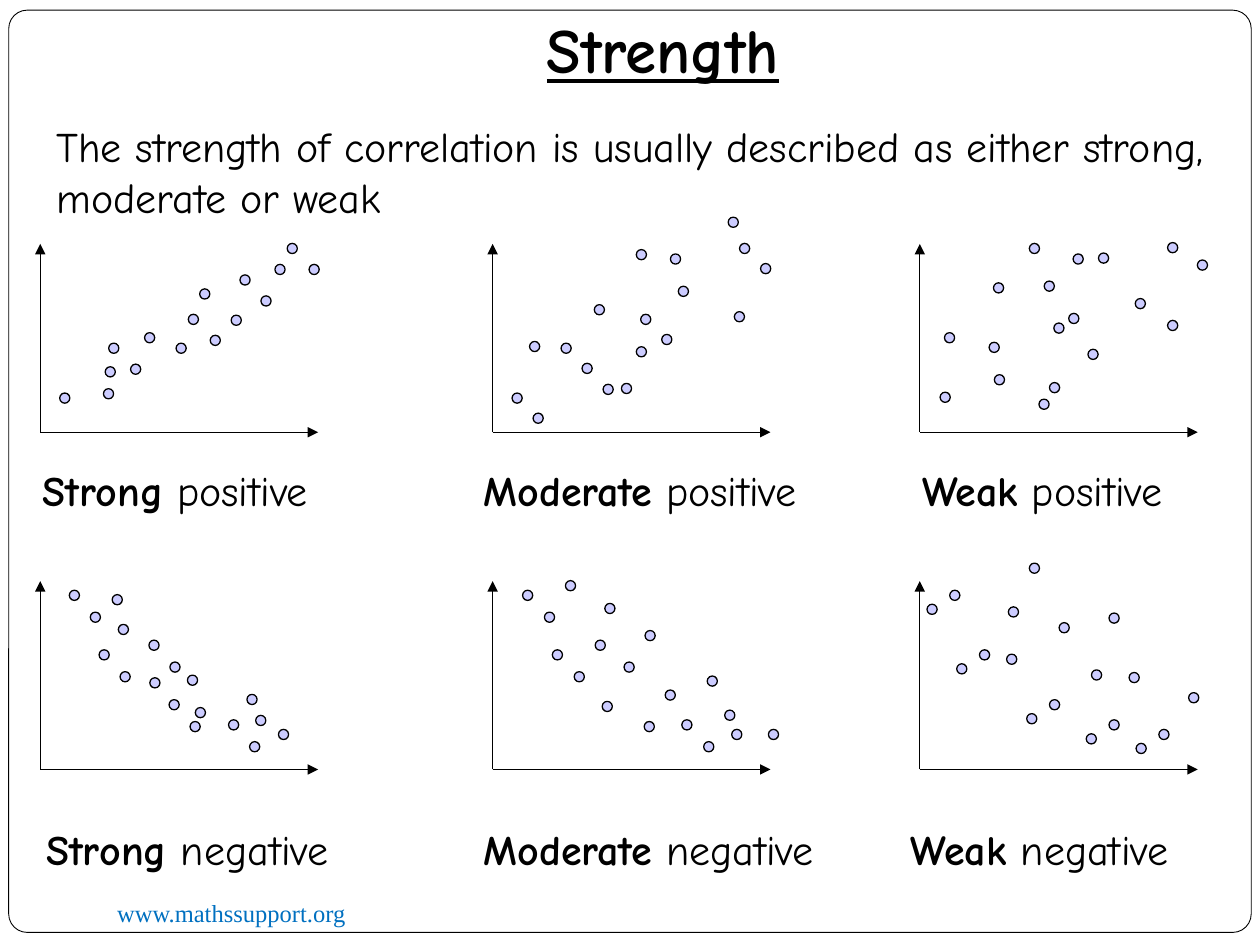
from dataclasses import dataclass

import pptx
import pptx.dml.color
import pptx.enum.shapes
import pptx.enum.text
import pptx.oxml
import pptx.oxml.ns
import pptx.util

BLACK = pptx.dml.color.RGBColor(0x00, 0x00, 0x00)
WHITE = pptx.dml.color.RGBColor(0xFF, 0xFF, 0xFF)
LAVENDER = pptx.dml.color.RGBColor(0xCC, 0xCC, 0xFF)
LINK_BLUE = pptx.dml.color.RGBColor(0x00, 0x70, 0xC0)
BODY_FONT = "Comic Neue"
BODY_SIZE = 24
AXIS_WIDTH = 158.8
AXIS_HEIGHT = 107.6
DOT_SIZE = 5.8


@dataclass(frozen=True)
class Box:
    left: float
    top: float
    width: float
    height: float


@dataclass(frozen=True)
class Column:
    strength: str
    axis_x: float
    label_width: float


@dataclass(frozen=True)
class Row:
    direction: str
    axis_y: float
    label_top: float
    trend: dict[str, tuple[float, float]]


@dataclass(frozen=True)
class Cluster:
    right: float
    up: float
    members: str


@dataclass(frozen=True)
class ScatterPlot:
    column: Column
    row: Row
    label_left: float
    clusters: list[Cluster]
    strays: list[tuple[float, float]]


RISING = dict(zip("abcdef", [(0, 0), (28, 28.5), (62.5, 5.5), (73.5, 45), (90.5, 79.5), (130, 85.5)]))
FALLING = dict(zip("abcdef", [(0, 0), (17, -34), (45.5, -28.5), (57, -62.5), (91, -74), (119.5, -79.5)]))
STRONG = Column("Strong", 23, 196)
MODERATE = Column("Moderate", 281.5, 228)
WEAK = Column("Weak", 525.6, 187)
POSITIVE = Row("positive", 247, 262, RISING)
NEGATIVE = Row("negative", 439.7, 467, FALLING)

PLOTS = [
    ScatterPlot(
        STRONG, POSITIVE, 17.3,
        [Cluster(14, 19.5, "abdf"), Cluster(26.5, 7.5, "bdf")],
        [(80.5, 48), (39, 22), (112, 64), (117, 87), (62.5, 54), (94, 79), (137, 93),
         (129, 75), (40, 34.5)],
    ),
    ScatterPlot(
        MODERATE, POSITIVE, 269.3,
        [Cluster(14, 19.5, "abcdef"), Cluster(26, 8, "abdf")],
        [(85, 46), (109, 80.5), (66, 24.5), (24, 49), (61, 70), (85, 101.5), (141, 66),
         (137.5, 120)],
    ),
    ScatterPlot(
        WEAK, POSITIVE, 519.8,
        [Cluster(14.5, 20, "abcdef"), Cluster(17, 54, "abcd"), Cluster(71, 16, "abde")],
        [(74, 83.5), (45.5, 30), (126, 73.5), (65.5, 105)],
    ),
    ScatterPlot(
        STRONG, NEGATIVE, 19.4,
        [Cluster(19.5, 99.5, "abcdef"), Cluster(31.5, 87, "abcde")],
        [(44, 97), (47.5, 80), (65.5, 49.5), (87, 51), (121, 40), (91.5, 32.5), (126, 28)],
    ),
    ScatterPlot(
        MODERATE, NEGATIVE, 269.3,
        [Cluster(20, 99.5, "abef"), Cluster(44.5, 105, "abcde"), Cluster(32.5, 87, "abcde")],
        [(67, 92), (65.5, 36), (125.5, 50.5), (160.5, 20)],
    ),
    ScatterPlot(
        WEAK, NEGATIVE, 513.4,
        [Cluster(20, 99.5, "abdef"), Cluster(65.5, 115, "abcde"), Cluster(7, 91.5, "abcdef")],
        [(53.5, 90), (101, 54)],
    ),
]


def in_points(*lengths: float) -> list[pptx.util.Pt]:
    return [pptx.util.Pt(length) for length in lengths]


def bounds(box: Box) -> list[pptx.util.Pt]:
    return in_points(box.left, box.top, box.width, box.height)


def format_font(font, size: float, color=BLACK, name: str = BODY_FONT, bold: bool = False) -> None:
    font.name = name
    font.size = pptx.util.Pt(size)
    font.color.rgb = color
    font.bold = bold


def draw_text(slide, box: Box, wording: str, size: float = BODY_SIZE, color=BLACK,
              name: str = BODY_FONT):
    text_frame = slide.shapes.add_textbox(*bounds(box)).text_frame
    text_frame.word_wrap = True
    text_frame.text = wording
    paragraph = text_frame.paragraphs[0]
    format_font(paragraph.runs[0].font, size, color, name)
    return paragraph


def draw_shape(slide, preset, box: Box, fill, line_width: float):
    shape = slide.shapes.add_shape(preset, *bounds(box))
    shape.shadow.inherit = False
    shape.fill.solid()
    shape.fill.fore_color.rgb = fill
    shape.line.color.rgb = BLACK
    shape.line.width = pptx.util.Pt(line_width)
    return shape


def draw_frame(slide) -> None:
    frame = draw_shape(
        slide, pptx.enum.shapes.MSO_SHAPE.ROUNDED_RECTANGLE, Box(5, 5.8, 710, 527), WHITE, 0.5
    )
    frame.adjustments[0] = 0.02
    slide.shapes._spTree.insert(2, frame._element)


def draw_title(slide) -> None:
    title = slide.shapes.title
    title.left, title.top, title.width, title.height = in_points(305.3, 2.2, 170.6, 51)
    text_frame = title.text_frame
    text_frame.text = "Strength"
    text_frame.word_wrap = True
    text_frame.auto_size = pptx.enum.text.MSO_AUTO_SIZE.NONE
    text_frame.vertical_anchor = pptx.enum.text.MSO_ANCHOR.TOP
    paragraph = text_frame.paragraphs[0]
    paragraph.alignment = pptx.enum.text.PP_ALIGN.LEFT
    font = paragraph.runs[0].font
    format_font(font, 36, bold=True)
    font.underline = True


def draw_axis(slide, x: float, y: float, right: float, up: float) -> None:
    axis = slide.shapes.add_connector(
        pptx.enum.shapes.MSO_CONNECTOR.STRAIGHT, *in_points(x, y, x + right, y - up)
    )
    axis.line.color.rgb = BLACK
    axis.line.width = pptx.util.Pt(0.75)
    namespace = pptx.oxml.ns.nsdecls("a")
    arrowhead = pptx.oxml.parse_xml(f'<a:tailEnd {namespace} type="triangle"/>')
    axis.line._get_or_add_ln().append(arrowhead)
    axis._element.spPr.append(pptx.oxml.parse_xml(f"<a:effectLst {namespace}/>"))


def plot_points(plot: ScatterPlot) -> list[tuple[float, float]]:
    clustered = [
        (cluster.right + plot.row.trend[member][0], cluster.up + plot.row.trend[member][1])
        for cluster in plot.clusters
        for member in cluster.members
    ]
    return clustered + plot.strays


def draw_plot(slide, plot: ScatterPlot) -> None:
    column, row = plot.column, plot.row
    x, y = column.axis_x, row.axis_y
    draw_axis(slide, x, y, 0, AXIS_HEIGHT)
    draw_axis(slide, x, y, AXIS_WIDTH, 0)
    for right, up in plot_points(plot):
        dot = Box(x + right - DOT_SIZE / 2, y - up - DOT_SIZE / 2, DOT_SIZE, DOT_SIZE)
        draw_shape(slide, pptx.enum.shapes.MSO_SHAPE.OVAL, dot, LAVENDER, 0.75)
    label_box = Box(plot.label_left, row.label_top, column.label_width, 36)
    label = draw_text(slide, label_box, column.strength)
    label.runs[0].font.bold = True
    direction = label.add_run()
    direction.text = f" {row.direction}"
    format_font(direction.font, BODY_SIZE)


def main() -> None:
    presentation = pptx.Presentation()
    presentation.slide_width, presentation.slide_height = in_points(720, 540)
    slide = presentation.slides.add_slide(presentation.slide_layouts[5])
    draw_frame(slide)
    draw_title(slide)
    draw_text(slide, Box(59.8, 509.8, 234, 24.5), "www.mathssupport.org", 14,
              LINK_BLUE, "Times New Roman")
    draw_text(slide, Box(25.2, 65.5, 674.6, 65.5),
              "The strength of correlation is usually described as either strong, moderate or weak")
    for plot in PLOTS:
        draw_plot(slide, plot)
    presentation.save("out.pptx")


if __name__ == "__main__":
    main()
